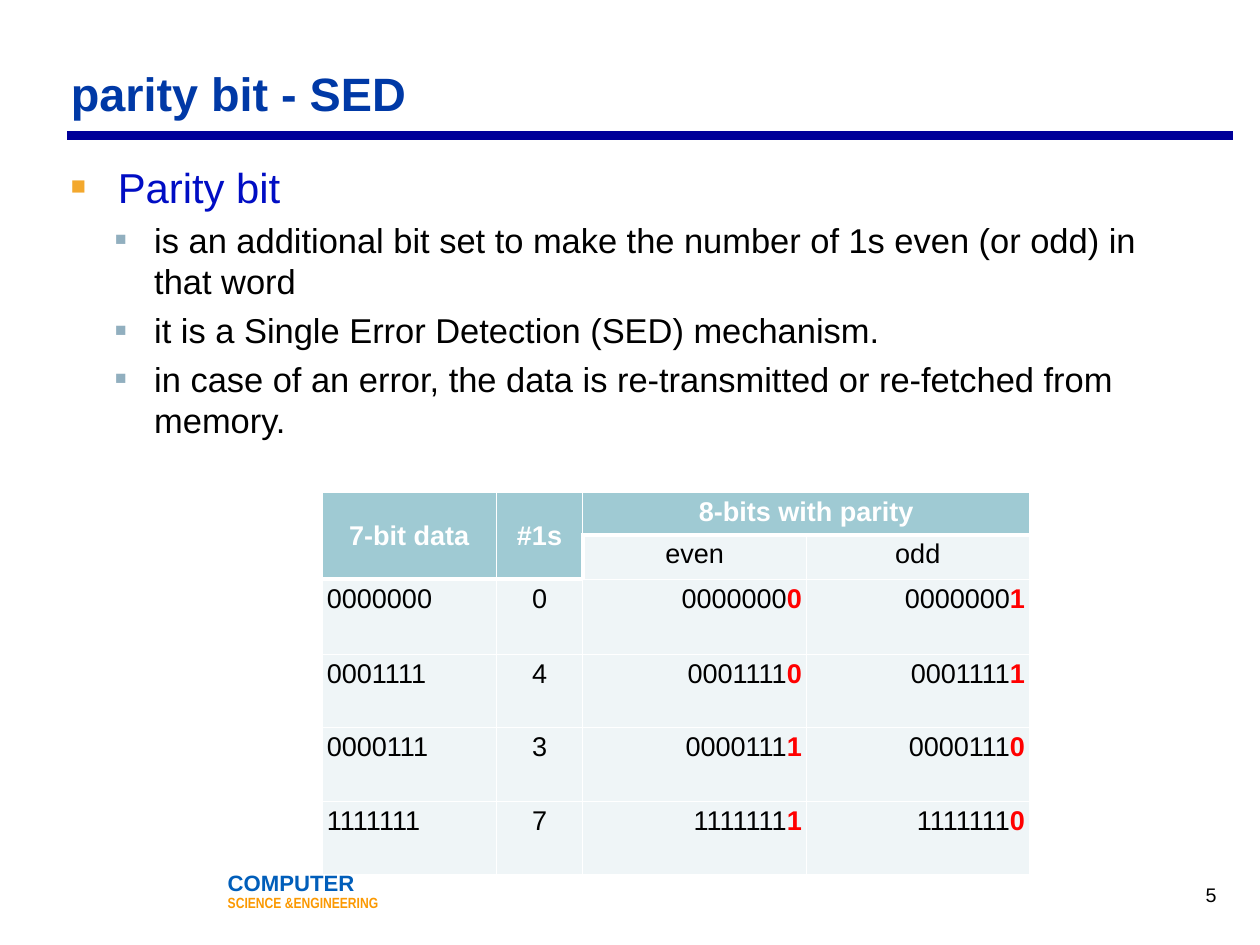
from lxml.etree import SubElement
from pptx import Presentation
from pptx.dml.color import RGBColor
from pptx.enum.shapes import MSO_CONNECTOR, MSO_SHAPE
from pptx.enum.text import MSO_ANCHOR, MSO_AUTO_SIZE, PP_ALIGN
from pptx.oxml.ns import qn
from pptx.util import Inches, Pt

SLIDE_WIDTH, SLIDE_HEIGHT = Inches(14.22), Inches(10.67)
GRID_COLUMNS, GRID_ROWS = 96, 72

WHITE = RGBColor(0xFF, 0xFF, 0xFF)
BLACK = RGBColor(0x00, 0x00, 0x00)
RED = RGBColor(0xFF, 0x00, 0x00)
NAVY = RGBColor(0x00, 0x00, 0x99)
TITLE_BLUE = RGBColor(0x00, 0x39, 0xA6)
TOPIC_BLUE = RGBColor(0x00, 0x0D, 0xC4)
FOOTER_BLUE = RGBColor(0x01, 0x5E, 0xBA)
FOOTER_ORANGE = RGBColor(0xFB, 0x99, 0x02)
BULLET_ORANGE = RGBColor(0xF3, 0xA8, 0x2D)
BULLET_GREY = RGBColor(0x91, 0xAF, 0xBF)
HEADER_TEAL = RGBColor(0x9F, 0xCA, 0xD3)
CELL_PALE = RGBColor(0xEF, 0xF5, 0xF7)

TOPIC = "Parity bit"
POINTS = [
    "is an additional bit set to make the number of 1s even (or odd) in that word",
    "it is a Single Error Detection (SED) mechanism.",
    "in case of an error, the data is re-transmitted or re-fetched from memory.",
]
DATA_WORDS = ["0000000", "0001111", "0000111", "1111111"]

# Table measures in grid units, rules in points
TABLE_COLUMNS = [13.23, 6.62, 17.01, 17.01]
TABLE_ROWS = [3.24, 3.37, 5.74, 5.6, 5.6, 5.6]
THIN, THICK = 1, 4


def columns(count):
    return int(SLIDE_WIDTH * count / GRID_COLUMNS)


def rows(count):
    return int(SLIDE_HEIGHT * count / GRID_ROWS)


def area(left, top, width, height):
    return columns(left), rows(top), columns(width), rows(height)


def add_text(paragraph, text, size, color=BLACK, bold=False, font="Arial", align=None):
    run = paragraph.add_run()
    run.text = text
    run.font.name = font
    run.font.size = Pt(size)
    run.font.bold = bold
    run.font.color.rgb = color
    if align is not None:
        paragraph.alignment = align


def set_frame(frame, anchor=MSO_ANCHOR.TOP, inset=0.07):
    frame.word_wrap = True
    frame.auto_size = MSO_AUTO_SIZE.NONE
    frame.vertical_anchor = anchor
    frame.margin_left = frame.margin_right = Inches(inset)
    frame.margin_top = frame.margin_bottom = Inches(inset)


def place(shape, left, top, width, height):
    shape.left, shape.top, shape.width, shape.height = area(left, top, width, height)


def set_bullet(paragraph, color, percent, indent, hanging):
    properties = paragraph._p.get_or_add_pPr()
    properties.set("marL", str(Inches(indent)))
    properties.set("indent", str(-Inches(hanging)))
    bullet_color = SubElement(properties, qn("a:buClr"))
    SubElement(bullet_color, qn("a:srgbClr"), val=str(color))
    SubElement(properties, qn("a:buSzPct"), val=str(percent * 1000))
    SubElement(properties, qn("a:buFont"), typeface="Arial")
    SubElement(properties, qn("a:buChar"), char="■")


def add_title(slide):
    title = slide.shapes.title
    place(title, 4.93, 4.25, 86.75, 5.47)
    set_frame(title.text_frame, MSO_ANCHOR.BOTTOM)
    add_text(title.text_frame.paragraphs[0], "parity bit - SED", 38, TITLE_BLUE,
             bold=True, align=PP_ALIGN.LEFT)


def add_title_rule(slide):
    rule = slide.shapes.add_connector(MSO_CONNECTOR.STRAIGHT, columns(5.13), rows(10.32),
                                      columns(93.91), rows(10.32))
    rule.line.color.rgb = NAVY
    rule.line.width = Pt(8)
    SubElement(rule._element.spPr, qn("a:effectLst"))


def add_body(slide):
    body = slide.placeholders[1]
    place(body, 4.93, 11.81, 86.75, 53.65)
    frame = body.text_frame
    set_frame(frame)
    topic = frame.paragraphs[0]
    set_bullet(topic, BULLET_ORANGE, 60, indent=0.53, hanging=0.53)
    topic.space_before = Pt(0)
    add_text(topic, TOPIC, 34, TOPIC_BLUE)
    for point in POINTS:
        paragraph = frame.add_paragraph()
        paragraph.level = 1
        set_bullet(paragraph, BULLET_GREY, 55, indent=0.94, hanging=0.44)
        paragraph.space_before = Pt(6)
        add_text(paragraph, point, 28)


def set_borders(cell, left=THIN, right=THIN, top=THIN, bottom=THIN):
    properties = cell._tc.get_or_add_tcPr()
    for side, width in zip("LRTB", (left, right, top, bottom)):
        line = SubElement(properties, qn(f"a:ln{side}"), w=str(Pt(width)))
        fill = SubElement(line, qn("a:solidFill"))
        SubElement(fill, qn("a:srgbClr"), val=str(WHITE))


def style_cell(cell, row, column):
    header = row == 0 or (row == 1 and column < 2)
    below_header = row == (2 if column < 2 else 1)
    set_borders(cell,
                left=THICK if (row, column) == (1, 2) else THIN,
                top=THICK if below_header else THIN,
                bottom=THICK if header else THIN)
    cell.fill.solid()
    cell.fill.fore_color.rgb = HEADER_TEAL if header else CELL_PALE
    cell.margin_left = cell.margin_right = Inches(0.05)
    cell.margin_top = cell.margin_bottom = Inches(0.05)
    cell.vertical_anchor = MSO_ANCHOR.MIDDLE if header and column < 2 else MSO_ANCHOR.TOP


def write_cell(table, row, column, text, align=PP_ALIGN.CENTER, parity=None, **text_format):
    paragraph = table.cell(row, column).text_frame.paragraphs[0]
    add_text(paragraph, text, 22, align=align, **text_format)
    if parity is not None:
        add_text(paragraph, str(parity), 22, RED, bold=True)


def add_parity_table(slide):
    frame = slide.shapes.add_table(
        len(TABLE_ROWS), len(TABLE_COLUMNS),
        *area(24.57, 37.52, sum(TABLE_COLUMNS), sum(TABLE_ROWS)))
    table = frame.table
    table.first_row = table.horz_banding = False
    for table_column, width in zip(table.columns, TABLE_COLUMNS):
        table_column.width = columns(width)
    for table_row, height in zip(table.rows, TABLE_ROWS):
        table_row.height = rows(height)
    for row in range(len(TABLE_ROWS)):
        for column in range(len(TABLE_COLUMNS)):
            style_cell(table.cell(row, column), row, column)

    # Headings
    for start, end in (((0, 0), (1, 0)), ((0, 1), (1, 1)), ((0, 2), (0, 3))):
        table.cell(*start).merge(table.cell(*end))
    for column, heading in enumerate(["7-bit data", "#1s", "8-bits with parity"]):
        write_cell(table, 0, column, heading, color=WHITE, bold=True)
    write_cell(table, 1, 2, "even")
    write_cell(table, 1, 3, "odd")

    # Data words with their even and odd parity bits
    for row, word in enumerate(DATA_WORDS, start=2):
        ones = word.count("1")
        write_cell(table, row, 0, word, align=PP_ALIGN.LEFT)
        write_cell(table, row, 1, str(ones))
        write_cell(table, row, 2, word, align=PP_ALIGN.RIGHT, parity=ones % 2)
        write_cell(table, row, 3, word, align=PP_ALIGN.RIGHT, parity=1 - ones % 2)


def add_footer(slide):
    box = slide.shapes.add_shape(MSO_SHAPE.RECTANGLE, *area(17.35, 67.14, 13.77, 3.31))
    box.shadow.inherit = False
    box.fill.solid()
    box.fill.fore_color.rgb = WHITE
    box.line.color.rgb = WHITE
    box.line.width = Pt(4)
    set_frame(box.text_frame, inset=0)
    department = box.text_frame.paragraphs[0]
    add_text(department, "COMPUTER", 18, FOOTER_BLUE, bold=True, align=PP_ALIGN.LEFT)
    field = box.text_frame.add_paragraph()
    field.space_before = Pt(6)
    add_text(field, "SCIENCE &ENGINEERING", 12, FOOTER_ORANGE, bold=True,
             font="Arial Narrow", align=PP_ALIGN.LEFT)
    department.line_spacing = field.line_spacing = 0.5


def add_page_number(slide):
    box = slide.shapes.add_textbox(*area(70.75, 66.26, 22.41, 3.85))
    set_frame(box.text_frame, MSO_ANCHOR.MIDDLE)
    add_text(box.text_frame.paragraphs[0], "5", 16, align=PP_ALIGN.RIGHT)


def main():
    presentation = Presentation()
    presentation.slide_width, presentation.slide_height = SLIDE_WIDTH, SLIDE_HEIGHT
    slide = presentation.slides.add_slide(presentation.slide_layouts[1])
    add_footer(slide)
    add_title_rule(slide)
    add_title(slide)
    add_body(slide)
    add_parity_table(slide)
    add_page_number(slide)
    presentation.save("out.pptx")


if __name__ == "__main__":
    main()
